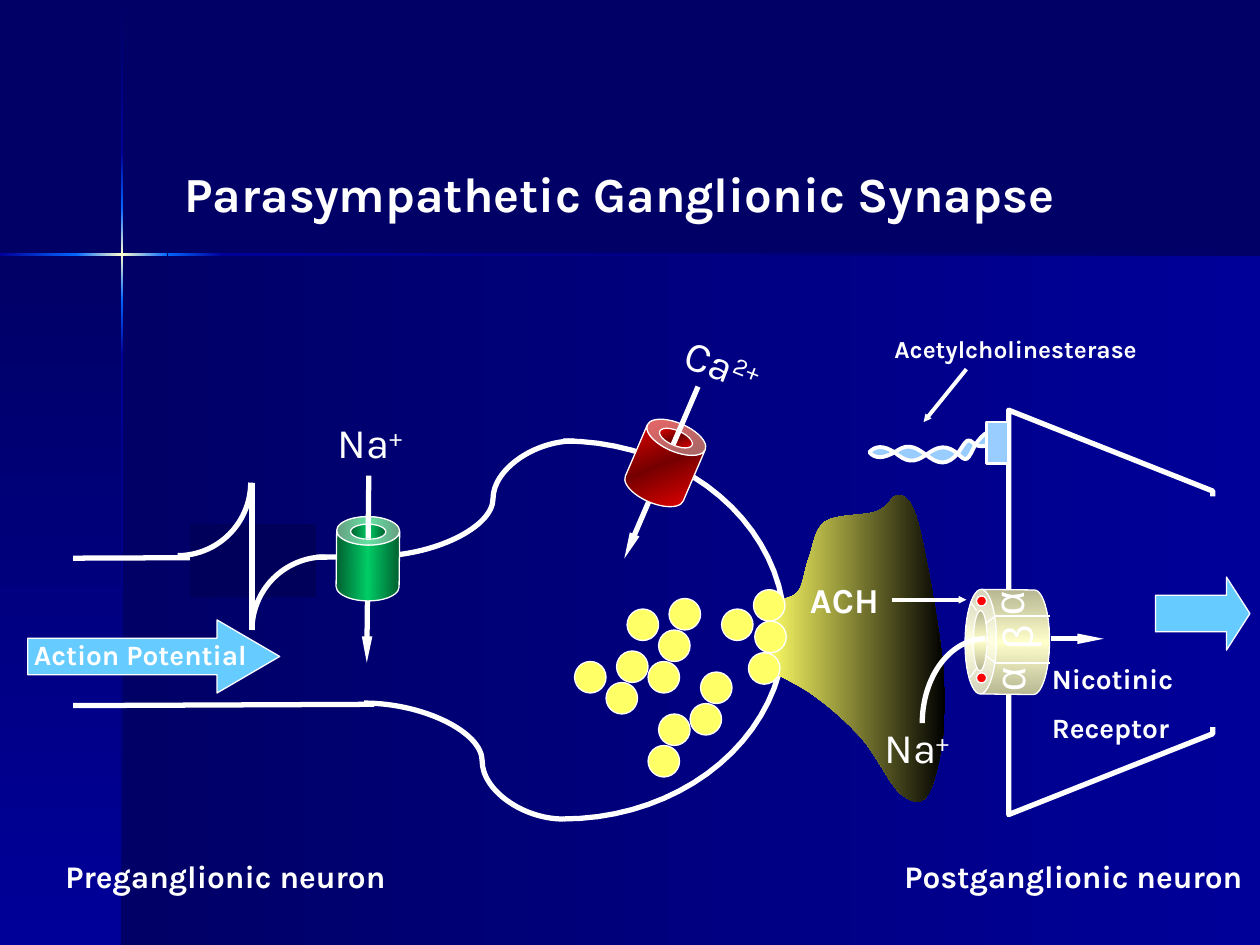
from itertools import pairwise
from math import cos, pi, radians, sin

from lxml import etree
from pptx import Presentation
from pptx.dml.color import RGBColor
from pptx.enum.shapes import MSO_CONNECTOR, MSO_SHAPE
from pptx.enum.text import MSO_AUTO_SIZE, PP_ALIGN
from pptx.oxml.ns import qn
from pptx.util import Inches, Pt

RECTANGLE, OVAL, CAN = MSO_SHAPE.RECTANGLE, MSO_SHAPE.OVAL, MSO_SHAPE.CAN
RIGHT_ARROW, TRAPEZOID = MSO_SHAPE.RIGHT_ARROW, MSO_SHAPE.FLOWCHART_MANUAL_OPERATION
STRAIGHT, CURVE = MSO_CONNECTOR.STRAIGHT, MSO_CONNECTOR.CURVE
LEFT, CENTER = PP_ALIGN.LEFT, PP_ALIGN.CENTER

COLUMNS, ROWS = 100, 75
CELL = Inches(10) / COLUMNS

THEME = {
    "night": "000066", "navy": "000099", "patch": "00005A", "blue": "0066FF",
    "glow": "FFFFCC", "white": "FFFFFF", "sky": "66CCFF", "enzyme": "99CCFF",
    "vesicle": "FFFF66", "black": "000000", "green": "00CC66", "forest": "005E2F",
    "red": "FF0000", "maroon": "760000", "khaki": "B6B692",
    "thin": 0.75, "seam": 1, "edge": 1.5, "medium": 2.25, "thick": 3,
    "title": {"name": "Karla", "size": Pt(28), "bold": True},
    "transmitter": {"name": "Karla", "size": Pt(20), "bold": True},
    "neuron": {"name": "Karla", "size": Pt(18), "bold": True},
    "label": {"name": "Karla", "size": Pt(16), "bold": True},
    "enzyme label": {"name": "Karla", "size": Pt(14), "bold": True},
    "ion": {"name": "Karla", "size": Pt(24), "bold": False},
    "subunit": {"name": "Arial", "size": Pt(24), "bold": False},
}

LABELS = [
    (["Action Potential"], "label", (1.7, 50.1, 27.5, 3.7), 0, LEFT),
    (["Na^+"], "ion", (25.8, 32.6, 9.2, 5), 0, LEFT),
    (["Ca^2+"], "ion", (53.3, 26.8, 10, 5), 21.3, LEFT),
    (["α"], "subunit", (78.8, 52.1, 2.5, 5), 270, LEFT),
    (["α"], "subunit", (78.7, 46.1, 2.5, 5), 270, LEFT),
    (["β"], "subunit", (79.4, 48.8, 2.5, 5), 270, LEFT),
    (["ACH"], "transmitter", (63.3, 45.4, 15, 4.3), 0, LEFT),
    (["Acetylcholinesterase"], "enzyme label", (70, 26, 24.2, 3.3), 0, LEFT),
    (["Na^+"], "ion", (69.2, 56.8, 9.2, 5), 0, LEFT),
    (["Parasympathetic Ganglionic Synapse"], "title", (13.3, 12.5, 71.7, 5.7), 0, CENTER),
    (["Preganglionic neuron"], "neuron", (4.2, 67.5, 40, 4), 0, LEFT),
    (["Postganglionic neuron"], "neuron", (70.8, 67.5, 30, 4), 0, LEFT),
    (["Nicotinic", "Receptor"], "label", (82.5, 52, 14.2, 7.7), 0, LEFT),
]
BEAM_X, BEAM_Y, BEAM_WIDTH = 9.6, 20.1, 0.2
VERTICAL_BEAM = [(0.1, "night"), (12.1, "navy"), (16.5, "blue"), (23.8, "blue"),
                 (28.2, "navy"), (ROWS, "night")]
HORIZONTAL_BEAM = [(0, "navy"), (6, "blue"), (13.3, "blue"), (17.7, "navy"), (COLUMNS, "night")]
MEMBRANE = [
    (STRAIGHT, (5.8, 44.3, 30.6, 44.2)), (CURVE, (29.7, 44.15, 45.6, 35)),
    (STRAIGHT, (5.8, 56, 29.7, 55.9)), (CURVE, (28.9, 55.8, 44.7, 65)),
]
BULB_ARC = (44.7, 50, 17.6, 15, -90, 90)
SPIKE_ARCS = [(14.1, 38.3, 5.8, 5.8, 90, 0), (25.8, 50, 5.8, 5.8, 270, 180)]
INFLOW_ARC = (78.2, 57.4, 5, 6.7, 270, 180)
CHANNELS = [
    {"center": (29.2, 44.35), "tilt": 0.6, "sheen": (["forest", "green", "forest"], 0)},
    {"center": (52.8, 36.75), "tilt": 23.2, "sheen": (["red", "maroon", "red"], 45)},
]
VESICLE_SIZE, VESICLE_ORIGIN, VESICLE_STEP = 2.5, (45.6, 47.5), 10 / 12
FREE_VESICLES = [(5, 1), (12, 7), (9, 0), (8, 3), (11, 10), (14, 1),
                 (0, 6), (8, 11), (4, 5), (3, 8), (7, 14), (7, 6)]
DOCKED_TOP, DOCKED_LEFTS = 46.8, [59.8, 59.9, 59.4]
CLOUD_UPPER_EDGE = [(61.3, 47.7), (63.3, 47), (64.2, 44.3), (65.5, 41.4), (69.6, 40.6), (71.5, 39.3)]
CLOUD_FRONT = [(73.1, 42.4), (75, 54.7), (73.9, 62.6), (71.6, 63.1)]
CLOUD_LOWER_EDGE = [(68.4, 58.6), (64.6, 55.2), (60.8, 53.1)]
ENZYME_SPINE = [(69, 35.9), (71, 35.9), (73.5, 36.1), (76, 36), (77.4, 35.3), (79.2, 34.4)]
ENZYME_LOBES = [0.4, 0.55, 0.6, 0.7, 0.5]
RECEPTOR_AXIS = 50.75
RECEPTOR_SHEEN = (["khaki", "glow", "khaki"], 0)
RECEPTOR_SEAMS = [("seam", (79, 1.85), (83.3, 1.85)), ("thin", (79, 1.85), (78.2, 1.25)),
                  ("thin", (77, 3), (77.5, 2.3))]
SITE_LEFT, SITE_SIZE, SITE_OFFSET = 77.5, 0.8, 3.05
POINTERS = [
    ("medium", "sm", (76.7, 29.3, 73.3, 33.5)),
    ("medium", "sm", (70.8, 47.6, 76.7, 47.6)),
    ("thick", "lg", (83.4, 50.7, 87.6, 50.7)),
]


def grid(values):
    return [round(value * CELL) for value in values]


def color(name):
    return RGBColor.from_string(THEME[name])


def paint(shape, fill, weight=None):
    shape.shadow.inherit = False
    if fill is None:
        shape.fill.background()
    elif isinstance(fill, str):
        shape.fill.solid()
        shape.fill.fore_color.rgb = color(fill)
    else:
        names, angle = fill
        shape.fill.gradient()
        shape.fill.gradient_angle = -angle % 360
        stops = next(shape.element.spPr.iter(qn("a:gsLst")))
        stops.clear()
        for index, name in enumerate(names):
            position = 100000 * index // (len(names) - 1)
            stop = etree.SubElement(stops, qn("a:gs"), pos=str(position))
            etree.SubElement(stop, qn("a:srgbClr"), val=THEME[name])
    if weight:
        shape.line.color.rgb = color("white")
        shape.line.width = Pt(THEME[weight])
    else:
        shape.line.fill.background()


def add_preset(shapes, kind, box, fill, weight=None, rotation=0, adjustments=()):
    shape = shapes.add_shape(kind, *grid(box))
    shape.rotation = rotation
    for index, value in enumerate(adjustments):
        shape.adjustments[index] = value
    paint(shape, fill, weight)


def add_line(shapes, ends, weight="thick", kind=STRAIGHT, head=None):
    connector = shapes.add_connector(kind, *grid(ends))
    connector.line.color.rgb = color("white")
    connector.line.width = Pt(THEME[weight])
    properties = connector.element.spPr
    if kind == CURVE:
        guides = next(properties.iter(qn("a:avLst")))
        etree.SubElement(guides, qn("a:gd"), name="adj1", fmla="val 59300")
    if head:
        etree.SubElement(properties.find(qn("a:ln")), qn("a:tailEnd"),
                         type="triangle", w="sm", len=head)
    etree.SubElement(properties, qn("a:effectLst"))


def add_outline(shapes, points, fill=None, weight=None, close=False):
    start, *rest = [grid(point) for point in points]
    builder = shapes.build_freeform(*start, scale=1.0)
    builder.add_line_segments(rest, close=close)
    paint(builder.convert_to_shape(), fill, weight)


def arc_points(x, y, radius_x, radius_y, first, last, steps=40):
    angles = [radians(first + (last - first) * step / steps) for step in range(steps + 1)]
    return [(x + radius_x * cos(angle), y + radius_y * sin(angle)) for angle in angles]


def smooth_points(anchors, steps=8):
    padded = [anchors[0], *anchors, anchors[-1]]
    points = []
    for index in range(len(anchors) - 1):
        for t in (step / steps for step in range(steps)):
            points.append(tuple(
                b + t * (c - a) / 2 + t**2 * (2*a - 5*b + 4*c - d) / 2 + t**3 * (3*b - a - 3*c + d) / 2
                for a, b, c, d in zip(*padded[index:index + 4])))
    return [*points, anchors[-1]]


def lobed_ribbon(spine, lobes, steps=8):
    upper, lower = [], []
    for index, (x, y) in enumerate(smooth_points(spine, steps)[:-1]):
        lobe, step = divmod(index, steps)
        swell = lobes[lobe] * sin(pi * step / steps)
        upper.append((x, y - swell))
        lower.append((x, y + swell))
    return [*upper, spine[-1], *reversed(lower)]


def add_beams(shapes):
    for beam, angle in ((VERTICAL_BEAM, 90), (HORIZONTAL_BEAM, 0)):
        for (start, first), (end, last) in pairwise(beam):
            names = [first, "glow", last] if first == last else [first, last]
            box = ((BEAM_X, start, BEAM_WIDTH, end - start) if angle
                   else (start, BEAM_Y, end - start, BEAM_WIDTH))
            add_preset(shapes, RECTANGLE, box, (names, angle))


def add_channel(shapes, center, tilt, sheen):
    def along(distance):
        return (center[0] + distance * sin(radians(tilt)), center[1] - distance * cos(radians(tilt)))

    def centered(middle, width, height):
        return (middle[0] - width / 2, middle[1] - height / 2, width, height)

    add_line(shapes, (*center, *along(-8.25)), head="lg")
    add_preset(shapes, CAN, centered(center, 5, 6.7), sheen, "thin", tilt, (0.454,))
    add_preset(shapes, OVAL, centered(along(2.15), 2.8, 1.2), sheen, "thin", tilt)
    add_line(shapes, (*along(6.6), *along(1.6)))


def add_vesicles(shapes):
    free = [tuple(origin + VESICLE_STEP * count for origin, count in zip(VESICLE_ORIGIN, place))
            for place in FREE_VESICLES]
    docked = [(left, DOCKED_TOP + VESICLE_SIZE * row) for row, left in enumerate(DOCKED_LEFTS)]
    for corner in free + docked:
        add_preset(shapes, OVAL, (*corner, VESICLE_SIZE, VESICLE_SIZE), "vesicle", "thin")


def add_receptor(shapes):
    add_preset(shapes, CAN, (75.8, 47.6, 8.3, 6.7), RECEPTOR_SHEEN, "thin", 270.6, (0.371,))
    add_preset(shapes, OVAL, (75.4, 50.3, 4.8, 1.1), RECEPTOR_SHEEN, "thin", 270.6)
    for side in (-1, 1):
        for weight, (x1, offset1), (x2, offset2) in RECEPTOR_SEAMS:
            ends = (x1, RECEPTOR_AXIS + side * offset1, x2, RECEPTOR_AXIS + side * offset2)
            add_line(shapes, ends, weight)
        site_top = RECEPTOR_AXIS + side * SITE_OFFSET - SITE_SIZE / 2
        add_preset(shapes, OVAL, (SITE_LEFT, site_top, SITE_SIZE, SITE_SIZE), "red", "thin")


def add_label(shapes, lines, style, box, rotation, alignment):
    shape = shapes.add_textbox(*grid(box))
    shape.rotation = rotation
    frame = shape.text_frame
    frame.word_wrap = True
    frame.auto_size = MSO_AUTO_SIZE.SHAPE_TO_FIT_TEXT
    for index, line in enumerate(lines):
        paragraph = frame.add_paragraph() if index else frame.paragraphs[0]
        paragraph.alignment = alignment
        paragraph.space_before = Pt(9 if index else 0)
        for part, text in enumerate(line.split("^")):
            run = paragraph.add_run()
            run.text = text
            for name, value in THEME[style].items():
                setattr(run.font, name, value)
            run.font.color.rgb = color("white")
            if part:
                run._r.get_or_add_rPr().set("baseline", "30000")


def main():
    presentation = Presentation()
    presentation.slide_width, presentation.slide_height = grid((COLUMNS, ROWS))
    slide = presentation.slides.add_slide(presentation.slide_layouts[6])
    slide.background.fill.solid()
    slide.background.fill.fore_color.rgb = color("night")
    shapes = slide.shapes

    add_preset(shapes, RECTANGLE, (9.7, 20.2, 90.3, 54.8), (["night", "navy"], 0))
    add_preset(shapes, RECTANGLE, (0, 20.2, 9.7, 54.8), (["night", "navy"], 90))
    add_beams(shapes)
    for kind, ends in MEMBRANE:
        add_line(shapes, ends, kind=kind)
    add_outline(shapes, arc_points(*BULB_ARC), weight="thick")
    add_preset(shapes, RECTANGLE, (15.1, 41.6, 10, 5.8), "patch")
    for arc in SPIKE_ARCS:
        add_outline(shapes, arc_points(*arc), weight="thick")
    add_line(shapes, (20, 38.3, 20, 50))
    add_preset(shapes, RIGHT_ARROW, (2.2, 49.2, 20, 5.8), "sky", "thin", 0, (0.5, 0.857))
    add_preset(shapes, TRAPEZOID, (72.1, 40.5, 32.1, 16.2), None, "thick", 270)
    add_preset(shapes, RECTANGLE, (95.3, 39.4, 1.6, 18.3), "navy")
    for channel in CHANNELS:
        add_channel(shapes, **channel)
    cloud = smooth_points(CLOUD_UPPER_EDGE + CLOUD_FRONT + CLOUD_LOWER_EDGE)
    add_outline(shapes, cloud, (["vesicle", "black"], 0), close=True)
    add_vesicles(shapes)
    add_receptor(shapes)
    add_outline(shapes, lobed_ribbon(ENZYME_SPINE, ENZYME_LOBES), "enzyme", "medium", close=True)
    add_preset(shapes, RECTANGLE, (78.3, 33.5, 1.7, 3.3), "enzyme", "edge")
    add_preset(shapes, RIGHT_ARROW, (91.7, 45.8, 7.5, 5.8), "sky", "thin", 0, (0.5, 0.321))
    add_outline(shapes, arc_points(*INFLOW_ARC), weight="thick")
    for weight, head, ends in POINTERS:
        add_line(shapes, ends, weight, head=head)
    for label in LABELS:
        add_label(shapes, *label)
    presentation.save("out.pptx")


if __name__ == "__main__":
    main()
